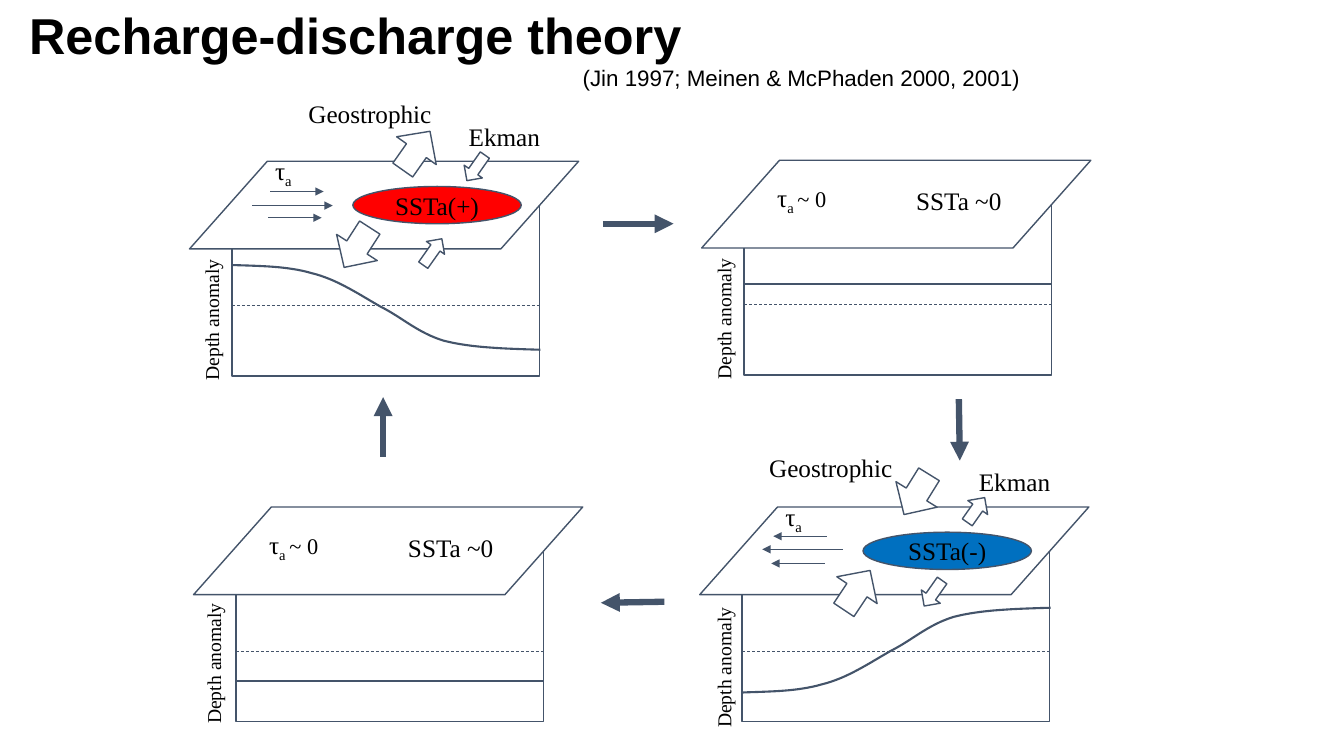
from dataclasses import dataclass
from typing import Any

from lxml import etree
from pptx import Presentation
from pptx.dml.color import RGBColor
from pptx.enum.dml import MSO_LINE
from pptx.enum.shapes import MSO_CONNECTOR, MSO_SHAPE
from pptx.enum.text import MSO_ANCHOR, MSO_AUTO_SIZE, PP_ALIGN
from pptx.oxml.ns import qn
from pptx.util import Emu, Pt

PX = 9144  # one px is a hundredth of an inch
SLATE = RGBColor(0x44, 0x54, 0x6A)
WHITE = RGBColor(0xFF, 0xFF, 0xFF)
BLACK = RGBColor(0x00, 0x00, 0x00)
RED = RGBColor(0xFF, 0x00, 0x00)
BLUE = RGBColor(0x00, 0x70, 0xC0)
SERIF, SANS = "Times New Roman", "Arial"
RECTANGLE, ELLIPSE = MSO_SHAPE.RECTANGLE, MSO_SHAPE.OVAL
PLANE, UP_ARROW = MSO_SHAPE.FLOWCHART_DATA, MSO_SHAPE.UP_ARROW
STRAIGHT, DASH = MSO_CONNECTOR.STRAIGHT, MSO_LINE.DASH
LEFT, CENTER = PP_ALIGN.LEFT, PP_ALIGN.CENTER
MIDDLE, FIT_TEXT = MSO_ANCHOR.MIDDLE, MSO_AUTO_SIZE.SHAPE_TO_FIT_TEXT

Box = tuple[int, int, int, int]  # left, top, width, height
Line = tuple[int, int, int, int]  # from x, y, to x, y


@dataclass(frozen=True)
class Span:
    text: str
    size: int = 18
    font: str = SERIF
    bold: bool = False
    subscript: bool = False


@dataclass(frozen=True)
class Flow:
    box: Box
    rotation: float


@dataclass(frozen=True)
class Anomaly:
    """Contents of a warm or cold phase, relative to its panel."""
    text: str
    color: RGBColor
    geostrophic: tuple[int, int]
    winds: list[Line]
    flows: list[Flow]
    rising: bool


@dataclass(frozen=True)
class Panel:
    left: int
    top: int
    depth_label: tuple[int, int]
    level: int = 0  # flat thermocline of a neutral phase
    anomaly: Anomaly | None = None


WARM = Anomaly("SSTa(+)", RED, (66, -109),
               [(20, 2, 100, 2), (36, 14, 89, 14), (38, -12, 91, -12)],
               [Flow((159, -76, 48, 47), 35.1), Flow((100, 20, 48, 47), 212.8),
                Flow((231, -51, 22, 31), 215.1), Flow((188, 32, 22, 32), 35.1)], False)
COLD = Anomaly("SSTa(-)", BLUE, (17, -101),
               [(100, 0, 20, 0), (84, -13, 31, -13), (82, 14, 29, 14)],
               [Flow((149, -78, 48, 47), 211.8), Flow((90, 17, 48, 47), 33.7),
                Flow((220, -54, 24, 30), 35.1), Flow((178, 28, 23, 31), 215.1)], True)
PANELS = [Panel(736, 545, (-89, 99), anomaly=COLD),
          Panel(234, 545, (-93, 95), level=131),
          Panel(738, 201, (-91, 97), level=81),
          Panel(230, 202, (-91, 97), anomaly=WARM)]
CYCLE: list[Line] = [(598, 222, 668, 222), (951, 396, 952, 457),
                     (659, 597, 596, 598), (380, 453, 380, 394)]
PANEL_WIDTH, PANEL_HEIGHT, MEAN_DEPTH = 305, 171, 101

# Bezier points of the sinking thermocline; a rising one is its mirror
THERMOCLINE = [(1, 61), (28, 62), (55, 62), (79, 69), (104, 75), (126, 90), (147, 102),
               (169, 113), (184, 128), (210, 136), (237, 143), (271, 144), (306, 145)]
MIRROR_SUM = 203
CURVE_STEPS = 16


def px(*values: int) -> list[Emu]:
    return [Emu(value * PX) for value in values]


def apply(target: Any, values: dict[str, Any]) -> None:
    for name, value in values.items():
        setattr(target, name, value)


def write(frame: Any, spans: list[Span], align: Any = LEFT) -> None:
    para = frame.paragraphs[0]
    para.alignment = align
    for span in spans:
        run = para.add_run()
        run.text = span.text
        apply(run.font, {"size": Pt(span.size), "name": span.font, "bold": span.bold})
        run.font.color.rgb = BLACK
        if span.subscript:
            run.font._element.set("baseline", "-25000")


def add_label(shapes: Any, box: Box, spans: list[Span], align: Any = LEFT,
              rotation: float = 0) -> None:
    label = shapes.add_textbox(*px(*box))
    label.rotation = rotation
    apply(label.text_frame, {"word_wrap": False, "auto_size": FIT_TEXT})
    write(label.text_frame, spans, align)


def add_outline(shapes: Any, kind: Any, box: Box, fill: RGBColor = WHITE,
                rotation: float = 0) -> Any:
    shape = shapes.add_shape(kind, *px(*box))
    shape.rotation = rotation
    shape.shadow.inherit = False
    shape.fill.solid()
    shape.fill.fore_color.rgb = fill
    shape.line.color.rgb = SLATE
    shape.line.width = Pt(1)
    return shape


def add_line(shapes: Any, ends: Line, width: float, arrow: bool = False,
             dashed: bool = False) -> None:
    line = shapes.add_connector(STRAIGHT, *px(*ends))
    line.line.color.rgb = SLATE
    line.line.width = Pt(width)
    if dashed:
        line.line.dash_style = DASH
    if arrow:
        etree.SubElement(line.line._get_or_add_ln(), qn("a:tailEnd"), type="triangle")
    etree.SubElement(line._element.spPr, qn("a:effectLst"))


def add_thermocline(shapes: Any, left: int, top: int, rising: bool) -> None:
    knots = [(left + x, top + (MIRROR_SUM - y if rising else y)) for x, y in THERMOCLINE]
    points = []
    for start in range(0, len(knots) - 1, 3):
        for step in range(1, CURVE_STEPS + 1):
            t = step / CURVE_STEPS
            weights = ((1 - t) ** 3, 3 * t * (1 - t) ** 2, 3 * t * t * (1 - t), t ** 3)
            points.append(tuple(
                round(PX * sum(w * knots[start + i][axis] for i, w in enumerate(weights)))
                for axis in (0, 1)))
    builder = shapes.build_freeform(*px(*knots[0]))
    builder.add_line_segments(points, close=False)
    curve = builder.convert_to_shape()
    curve.shadow.inherit = False
    curve.fill.background()
    curve.line.color.rgb = SLATE
    curve.line.width = Pt(1.5)


def add_panel(page: Any, panel: Panel) -> None:
    shapes = page.shapes.add_group_shape().shapes
    left, top = panel.left, panel.top

    def place(x: int, y: int, width: int, height: int) -> Box:
        return left + x, top + y, width, height

    def span_width(depth: int) -> Line:
        return left, top + depth, left + PANEL_WIDTH, top + depth

    # Depth section below the sea surface
    add_outline(shapes, RECTANGLE, place(0, 0, PANEL_WIDTH, PANEL_HEIGHT))
    add_outline(shapes, PLANE, place(-42, -42, 386, 87))
    add_line(shapes, span_width(MEAN_DEPTH), 0.5, dashed=True)
    add_label(shapes, place(*panel.depth_label, 142, 34), [Span("Depth anomaly", 14)],
              rotation=270)

    anomaly = panel.anomaly
    if anomaly is None:
        add_label(shapes, place(23, -25, 71, 40),
                  [Span("τ"), Span("a ", subscript=True), Span("~ 0", 16)])
        add_label(shapes, place(160, -22, 106, 40), [Span("SSTa ~0")], CENTER)
        add_line(shapes, span_width(panel.level), 1.5)
        return

    # Sea surface temperature, wind stress and transports
    pool = add_outline(shapes, ELLIPSE, place(120, -17, 167, 37), anomaly.color)
    apply(pool.text_frame, {"word_wrap": False, "vertical_anchor": MIDDLE})
    write(pool.text_frame, [Span(anomaly.text)], CENTER)
    for x1, y1, x2, y2 in anomaly.winds:
        add_line(shapes, (left + x1, top + y1, left + x2, top + y2), 0.5, arrow=True)
    add_thermocline(shapes, left, top, anomaly.rising)
    add_label(shapes, place(33, -53, 38, 40), [Span("τ"), Span("a", subscript=True)])
    for flow in anomaly.flows:
        add_outline(shapes, UP_ARROW, place(*flow.box), rotation=flow.rotation)
    add_label(shapes, place(*anomaly.geostrophic, 145, 40), [Span("Geostrophic")])
    add_label(shapes, place(225, -87, 92, 40), [Span("Ekman")])


def main() -> None:
    deck = Presentation()
    deck.slide_width, deck.slide_height = px(1333, 750)
    page = deck.slides.add_slide(deck.slide_layouts[6])
    for ends in CYCLE:
        add_line(page.shapes, ends, 4.5, arrow=True)
    for panel in PANELS:
        add_panel(page, panel)
    # Title and citation
    add_label(page.shapes, (19, -1, 674, 71),
              [Span("Recharge-discharge theory", 36, SANS, bold=True)])
    add_label(page.shapes, (568, 59, 459, 37),
              [Span("(Jin 1997; Meinen & McPhaden 2000, 2001)", 16, SANS)])
    deck.save("out.pptx")


if __name__ == "__main__":
    main()
